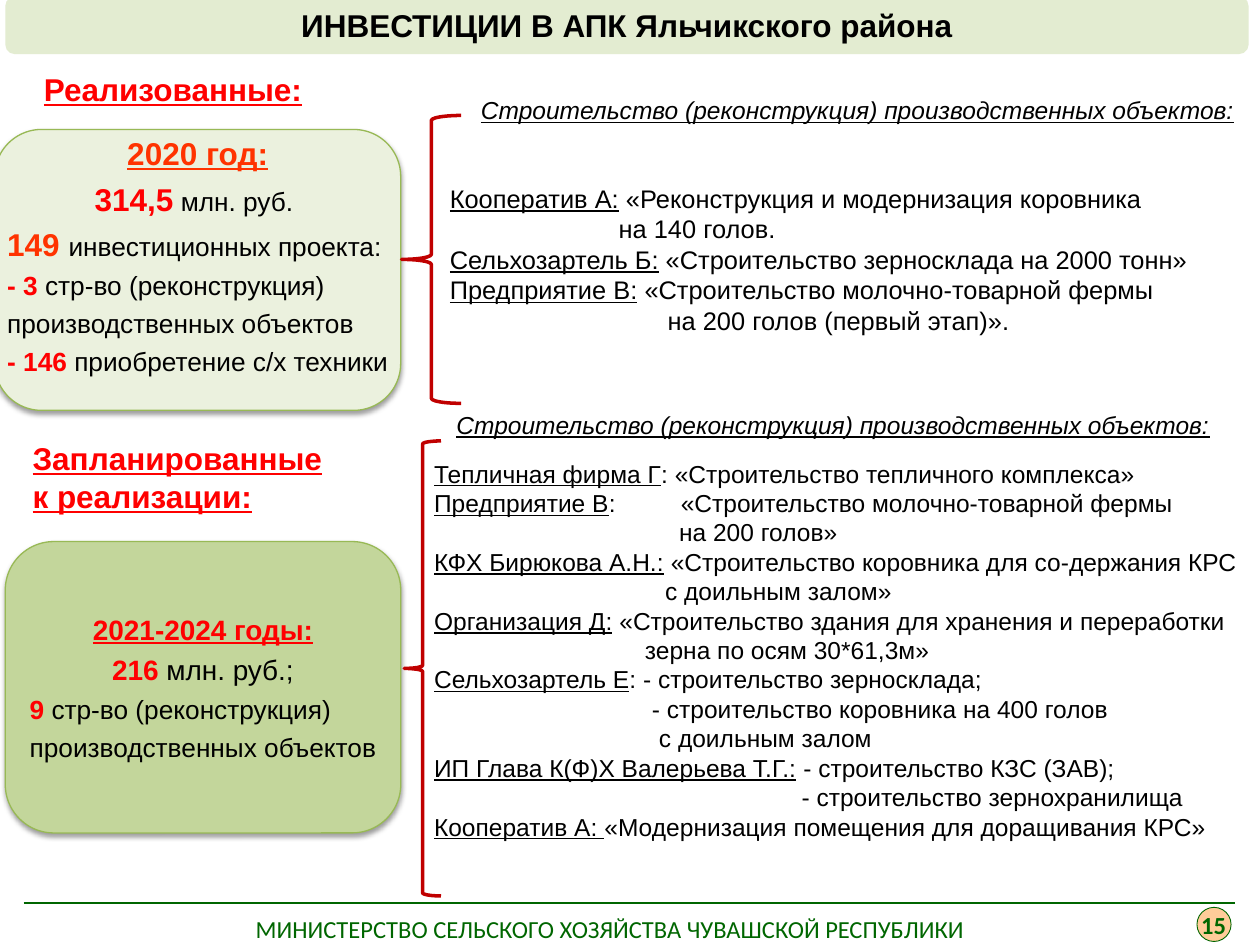
"""Build the slide on farm investment in the district."""
from lxml.etree import SubElement
from pptx import Presentation
from pptx.dml.color import RGBColor
from pptx.enum.shapes import MSO_CONNECTOR, MSO_SHAPE
from pptx.enum.text import MSO_ANCHOR, PP_ALIGN
from pptx.oxml.ns import qn
from pptx.util import Pt

hue = RGBColor.from_string
MID, LEFT = PP_ALIGN.CENTER, PP_ALIGN.LEFT
RED, ORANGE, BLACK, GREEN = "FF0000", "FF3300", "000000", "006600"


def write(shape, rows, frame, base):
    text = shape.text_frame
    for key, val in frame.items():
        setattr(text, key, val)
    for i, (align, gap, runs) in enumerate(rows):
        para = text.paragraphs[0] if i == 0 else text.add_paragraph()
        para.alignment = align
        if i and gap:
            para.space_before = Pt(gap)
        for words, style in runs:
            run = para.add_run()
            run.text = words
            look = {**base, **style}
            run.font.color.rgb = hue(look.pop("tint", BLACK))
            look["size"] = Pt(look["size"])
            for key, val in look.items():
                setattr(run.font, key, val)


def draw(kind, box, fill, line, width):
    shape = slide.shapes.add_shape(kind, *map(Pt, box))
    shape.shadow.inherit = False
    if fill:
        shape.fill.solid()
        shape.fill.fore_color.rgb = hue(fill)
    else:
        shape.fill.background()
    if line:
        shape.line.color.rgb = hue(line)
        shape.line.width = Pt(width)
    else:
        shape.line.fill.background()
    return shape


deck = Presentation()
deck.slide_width, deck.slide_height = Pt(720), Pt(540)
slide = deck.slides.add_slide(deck.slide_layouts[6])

bold = {"bold": True}
under = {"underline": True}
arial = {"name": "Arial"}
wrap = {"word_wrap": True}
center = {"vertical_anchor": MSO_ANCHOR.MIDDLE}

title = draw(MSO_SHAPE.ROUNDED_RECTANGLE, (3, -2, 710.5, 33), "C3D69B", None, 0)
tone = title.fill._xPr.find(qn("a:solidFill"))[0]
SubElement(tone, qn("a:alpha"), val="46000")
write(title, [(MID, 0, [("ИНВЕСТИЦИИ В АПК Яльчикского района", bold)])],
      {**wrap, **center}, {**arial, "size": 18})

big = {"size": 18, "bold": True}
red = {"tint": RED, "bold": True}
done = [
    (MID, 0, [("2020 год:", {**big, **under, "tint": ORANGE})]),
    (MID, 4.5, [("314,5", {**big, "tint": RED}), (" млн. руб. ", {})]),
    (LEFT, 4.5, [("149 ", {**big, "tint": ORANGE}), ("инвестиционных проекта:", {})]),
    (LEFT, 3.75, [("- 3 ", red), ("стр-во (реконструкция) ", {})]),
    (LEFT, 3.75, [("производственных объектов", {})]),
    (LEFT, 3.75, [("- 146 ", red), ("приобретение с/х техники", {})]),
]
mean = {"size": 16}
plan = [
    (MID, 0, [("2021-2024 годы:", {**mean, **red, **under})]),
    (MID, 4, [("216 ", {**mean, **red}), ("млн. руб.;", mean)]),
    (LEFT, 3.75, [("9 ", red), ("стр-во (реконструкция) ", {})]),
    (LEFT, 3.75, [("производственных объектов", {})]),
]
cards = [
    ((-3, 74, 232, 160.5), "EBF1DE", done, 20),
    ((3, 309.5, 226, 166.5), "C3D69B", plan, 3.6),
]
for box, fill, rows, foot in cards:
    card = draw(MSO_SHAPE.ROUNDED_RECTANGLE, box, fill, "98B955", 0.75)
    glow = SubElement(card._element.spPr.find(qn("a:effectLst")), qn("a:outerShdw"),
                      blurRad=str(Pt(3.1)), dist=str(Pt(1.6)), dir="5400000", rotWithShape="0")
    SubElement(SubElement(glow, qn("a:srgbClr"), val=BLACK), qn("a:alpha"), val="38000")
    write(card, rows, {**center, "word_wrap": False, "margin_bottom": Pt(foot)},
          {**arial, "size": 15})

for box in [(229.5, 66, 34, 164.5), (231, 252, 21, 260)]:
    draw(MSO_SHAPE.LEFT_BRACE, box, None, "C00000", 2)

head = {**arial, **under, **red, "size": 18}
note = {**arial, **under, "size": 14, "italic": True}
works = "Строительство (реконструкция) производственных объектов:"
labels = [
    ((18, 36.5, 170.5, 29), "Реализованные:", LEFT, head),
    ((11.5, 247.5, 184.5, 51), "Запланированные к реализации:", LEFT, head),
    ((266.5, 51, 447, 24.5), works, MID, note),
    ((252.5, 230.5, 447, 24.5), works, MID, note),
]
for box, words, align, style in labels:
    label = slide.shapes.add_textbox(*map(Pt, box))
    write(label, [(align, 0, [(words, {})])], wrap, style)

built = [
    (0, "Кооператив А:", " «Реконструкция и модернизация коровника"),
    (96.5, "", "на 140 голов."),
    (0, "Сельхозартель Б:", " «Строительство зерносклада на 2000 тонн»"),
    (0, "Предприятие В:", " «Строительство молочно-товарной фермы"),
    (124.5, "", "на 200 голов (первый этап)»."),
]
future = [
    (0, "Тепличная фирма Г", ": «Строительство тепличного комплекса»"),
    (0, "Предприятие В", ":\t«Строительство молочно-товарной фермы"),
    (140, "", "на 200 голов»"),
    (0, "КФХ Бирюкова А.Н.:", " «Строительство коровника для со-держания КРС"),
    (132, "", "с доильным залом»"),
    (0, "Организация Д:", " «Строительство здания для хранения и переработки"),
    (120.5, "", "зерна по осям 30*61,3м»"),
    (0, "Сельхозартель Е", ": - строительство зерносклада;"),
    (124.5, "", "- строительство коровника на 400 голов"),
    (128.5, "", "с доильным залом"),
    (0, "ИП Глава К(Ф)Х Валерьева Т.Г.:", " - строительство КЗС (ЗАВ);"),
    (210, "", "- строительство зернохранилища"),
    (0, "Кооператив А: ", "«Модернизация помещения для доращивания КРС»"),
]
lists = [((250, 101, 490, 95), built, 14.5), ((241, 258.5, 487, 227.5), future, 14)]
for box, items, size in lists:
    area = slide.shapes.add_textbox(*map(Pt, box))
    rows = [(LEFT, 0, [(words, style) for words, style in ((firm, under), (work, {})) if words])
            for _, firm, work in items]
    write(area, rows, wrap, {**arial, "size": size})
    for para, (shift, _, work) in zip(area.text_frame.paragraphs, items):
        props = para._p.get_or_add_pPr()
        if shift:
            props.set("marL", str(Pt(shift)))
            props.set("indent", "0")
        if "\t" in work:
            SubElement(SubElement(props, qn("a:tabLst")), qn("a:tab"),
                       pos=str(Pt(141)), algn="l")

rule = slide.shapes.add_connector(MSO_CONNECTOR.STRAIGHT, Pt(13.5), Pt(516), Pt(705.5), Pt(516))
rule.line.color.rgb = hue(GREEN)
rule.line.width = Pt(0.75)
SubElement(rule._element.spPr, qn("a:effectLst"))

foot = {"name": "Calibri", "size": 14, "tint": GREEN}
owner = slide.shapes.add_textbox(Pt(139), Pt(519), Pt(425.5), Pt(24.5))
write(owner, [(LEFT, 0, [("МИНИСТЕРСТВО СЕЛЬСКОГО ХОЗЯЙСТВА ЧУВАШСКОЙ РЕСПУБЛИКИ", {})])],
      {"word_wrap": False}, foot)
draw(MSO_SHAPE.OVAL, (684, 518.5, 19.5, 19.5), "FFCC99", GREEN, 0.5)
page = slide.shapes.add_textbox(Pt(674.5), Pt(522.5), Pt(38), Pt(11.5))
write(page, [(MID, 0, [("15", bold)])], {**wrap, **center}, foot)

deck.save("out.pptx")
